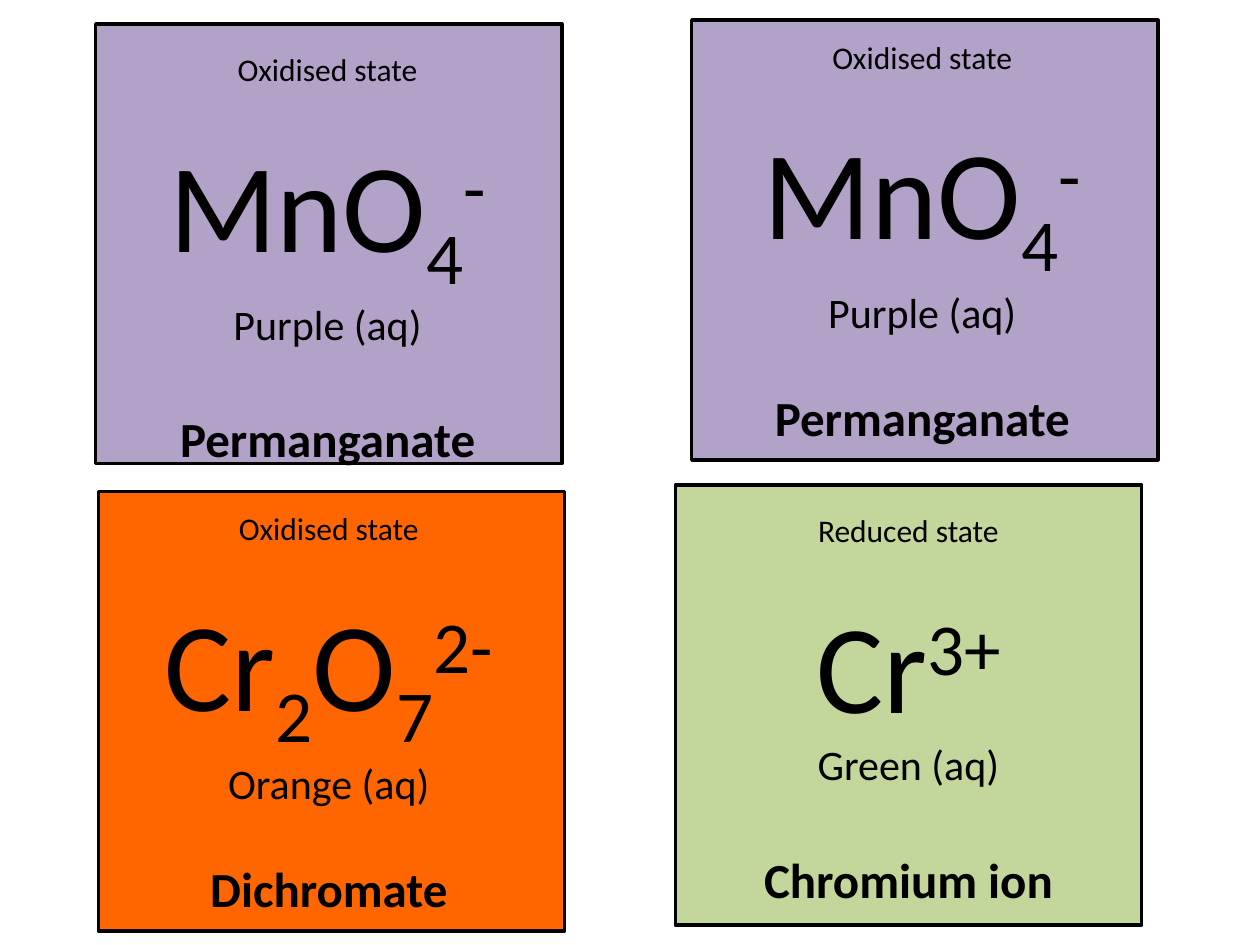
from pptx import Presentation
from pptx.dml.color import RGBColor
from pptx.enum.shapes import MSO_SHAPE as Shape
from pptx.enum.text import MSO_AUTO_SIZE as AutoSize, PP_ALIGN as Align
from pptx.util import Pt

SUB, NORMAL, SUPER = -25000, 0, 30000

PERMANGANATE = {
    "state": "Oxidised state",
    "formula": [("MnO", NORMAL), ("4", SUB), ("-", SUPER)],
    "colour": "Purple (aq)", "name": "Permanganate", "fill": "purple",
}
DICHROMATE = {
    "state": "Oxidised state",
    "formula": [("Cr", NORMAL), ("2", SUB), ("O", NORMAL), ("7", SUB), ("2-", SUPER)],
    "colour": "Orange (aq)", "name": "Dichromate", "fill": "orange",
}
CHROMIUM = {
    "state": "Reduced state",
    "formula": [("Cr", NORMAL), ("3+", SUPER)],
    "colour": "Green (aq)", "name": "Chromium ion", "fill": "green",
}

# ion, card corner, label corner, label height, gap above the name
CARDS = [
    (CHROMIUM, (385.9, 277.2), (374.4, 288.7), 239.8, 34.2),
    (DICHROMATE, (56.2, 280.8), (43.2, 287.3), 230.4, 29.3),
    (PERMANGANATE, (54.7, 13.7), (42.5, 25.2), 239.8, 34.2),
    (PERMANGANATE, (395.3, 11.5), (382.3, 18), 230.4, 29.3),
]
CARD_WIDTH, CARD_HEIGHT, LABEL_WIDTH = 266.4, 251.3, 289.4
STATE_GAP = 22

THEME = {
    "font": "Calibri",
    "ink": RGBColor(0, 0, 0),
    "purple": RGBColor(0xB3, 0xA2, 0xC7),
    "orange": RGBColor(0xFF, 0x66, 0x00),
    "green": RGBColor(0xC3, 0xD6, 0x9B),
    "line": 2,
    "state": 18, "formula": 72, "colour": 24, "name": 28,
}


def add_card(page, corner, fill):
    left, top = corner
    card = page.shapes.add_shape(
        Shape.RECTANGLE, Pt(left), Pt(top), Pt(CARD_WIDTH), Pt(CARD_HEIGHT))
    card.shadow.inherit = False
    card.fill.solid()
    card.fill.fore_color.rgb = THEME[fill]
    card.line.color.rgb = THEME["ink"]
    card.line.width = Pt(THEME["line"])


def add_label(page, ion, corner, height, name_gap):
    left, top = corner
    box = page.shapes.add_textbox(Pt(left), Pt(top), Pt(LABEL_WIDTH), Pt(height))
    frame = box.text_frame
    frame.word_wrap = True
    frame.auto_size = AutoSize.SHAPE_TO_FIT_TEXT
    gaps = {"state": STATE_GAP, "colour": name_gap}
    for index, role in enumerate(("state", "formula", "colour", "name")):
        para = frame.add_paragraph() if index else frame.paragraphs[0]
        para.alignment = Align.CENTER
        para.space_after = Pt(gaps.get(role, 0))
        pieces = ion[role] if role == "formula" else [(ion[role], NORMAL)]
        for text, baseline in pieces:
            span = para.add_run()
            span.text = text
            span.font.name = THEME["font"]
            span.font.size = Pt(THEME[role])
            span.font.bold = role == "name"
            span.font.color.rgb = THEME["ink"]
            if baseline:
                span.font._element.set("baseline", str(baseline))


def main():
    deck = Presentation()
    deck.slide_width, deck.slide_height = Pt(720), Pt(540)
    page = deck.slides.add_slide(deck.slide_layouts.get_by_name("Blank"))
    for ion, card_corner, label_corner, height, name_gap in CARDS:
        add_card(page, card_corner, ion["fill"])
        add_label(page, ion, label_corner, height, name_gap)
    deck.save("out.pptx")


if __name__ == "__main__":
    main()
